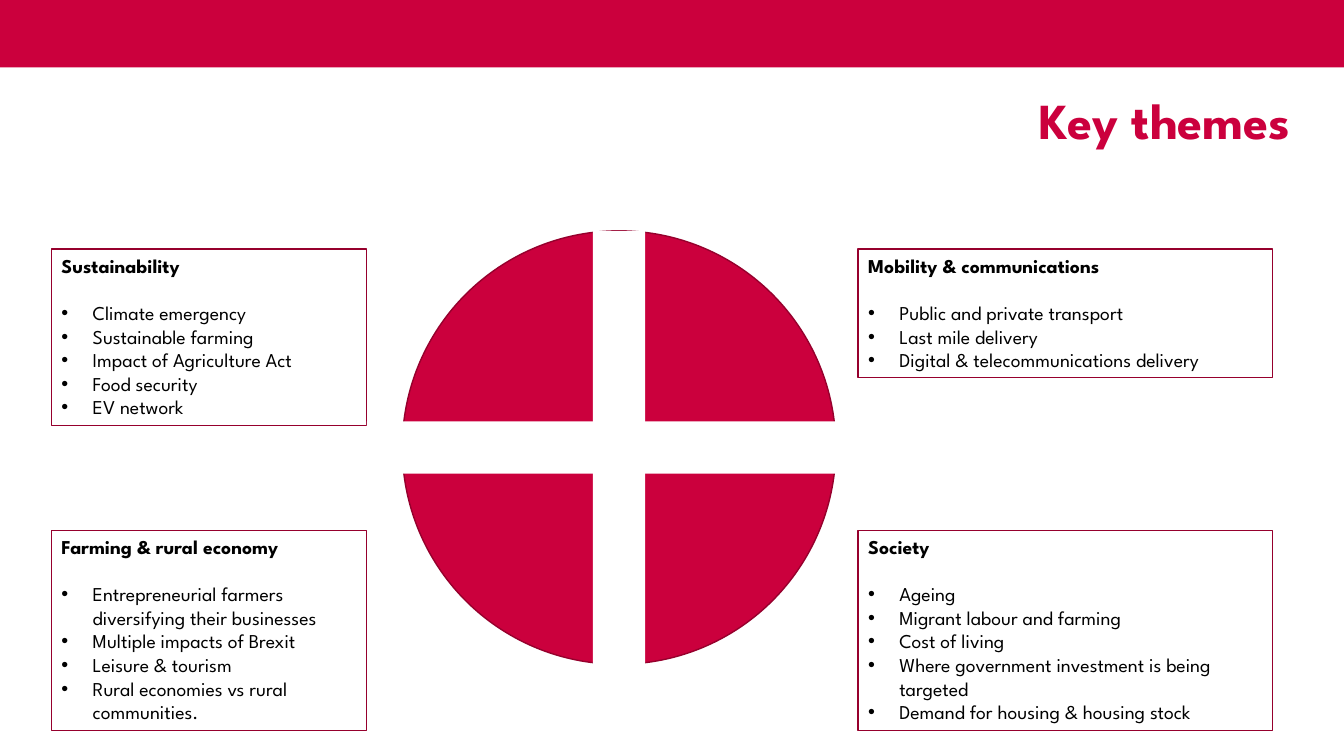
"""Build the Key themes slide: four topic boxes around a divided circle."""
from lxml import etree
from pptx import Presentation
from pptx.dml.color import RGBColor
from pptx.enum import shapes, text
from pptx.oxml.ns import qn
from pptx.util import Inches, Pt

CRIMSON = RGBColor(0xCB, 0x00, 0x3D)
MAROON = RGBColor(0x96, 0x00, 0x2D)
WHITE = RGBColor(0xFF, 0xFF, 0xFF)
BLACK = RGBColor(0x00, 0x00, 0x00)
FONT = "League Spartan"

LEFT, RIGHT = (0.51, 3.13), (8.51, 4.11)
UPPER, LOWER = 2.47, 5.26
CENTRE_X, CENTRE_Y = 6.14, 4.44
DIAMETER, GAP, BAR_LENGTH = 4.3, 0.52, 4.7

THEMES = [
    (LEFT, UPPER, 1.75, "Sustainability",
     ["Climate emergency", "Sustainable farming", "Impact of Agriculture Act",
      "Food security", "EV network"]),
    (RIGHT, UPPER, 1.28, "Mobility & communications",
     ["Public and private transport", "Last mile delivery",
      "Digital & telecommunications delivery"]),
    (LEFT, LOWER, 1.99, "Farming & rural economy",
     ["Entrepreneurial farmers diversifying their businesses",
      "Multiple impacts of Brexit", "Leisure & tourism",
      "Rural economies vs rural communities."]),
    (RIGHT, LOWER, 1.99, "Society",
     ["Ageing", "Migrant labour and farming", "Cost of living",
      "Where government investment is being targeted",
      "Demand for housing & housing stock"]),
]


def place(shape, left, top, width, height):
    """Set a shape's position and size in inches."""
    shape.left, shape.top = Inches(left), Inches(top)
    shape.width, shape.height = Inches(width), Inches(height)


def add_solid(page, kind, left, top, width, height, fill, line=None):
    """Add a filled preset shape, outlined only if a line colour is given."""
    shape = page.shapes.add_shape(
        kind, Inches(left), Inches(top), Inches(width), Inches(height))
    shape.shadow.inherit = False
    shape.fill.solid()
    shape.fill.fore_color.rgb = fill
    if line is None:
        shape.line.fill.background()
    else:
        shape.line.color.rgb = line
        shape.line.width = Pt(1)


def set_bullet(para, mark=None, indent=0.0):
    """Give a paragraph a hanging bullet, or none."""
    props = para._p.get_or_add_pPr()
    props.set("marL", str(Inches(indent)))
    props.set("indent", str(-Inches(indent)))
    if mark is None:
        etree.SubElement(props, qn("a:buNone"))
    else:
        etree.SubElement(props, qn("a:buFont")).set("typeface", "Arial")
        etree.SubElement(props, qn("a:buChar")).set("char", mark)


def write(para, words, size=14, color=BLACK, bold=False,
          align=text.PP_ALIGN.LEFT, spacing=1.0, after=0):
    """Write formatted text into a paragraph."""
    para.alignment = align
    para.line_spacing = spacing
    para.space_before, para.space_after = Pt(0), Pt(after)
    span = para.add_run()
    span.text = words
    span.font.name = FONT
    span.font.size = Pt(size)
    span.font.bold = bold
    span.font.color.rgb = color


def prepare_frame(shape, anchor):
    """Wrap and anchor a shape's text and keep the shape at its set size."""
    frame = shape.text_frame
    frame.word_wrap = True
    frame.auto_size = text.MSO_AUTO_SIZE.NONE
    frame.vertical_anchor = anchor
    return frame


def fill_title(title, words):
    """Place and write the slide title."""
    place(title, 7.47, 0.9, 5.43, 0.65)
    frame = prepare_frame(title, text.MSO_ANCHOR.MIDDLE)
    write(frame.paragraphs[0], words, size=36, color=CRIMSON, bold=True,
          align=text.PP_ALIGN.RIGHT, spacing=0.9)


def fill_theme(box, column, top, height, heading, items):
    """Place an outlined theme box and write its heading and list."""
    left, width = column
    place(box, left, top, width, height)
    box.line.color.rgb = MAROON
    box.line.width = Pt(0.75)
    frame = prepare_frame(box, text.MSO_ANCHOR.TOP)
    set_bullet(frame.paragraphs[0])
    write(frame.paragraphs[0], heading, bold=True, after=16.8)
    for item in items:
        para = frame.add_paragraph()
        set_bullet(para, "•", 0.31)
        write(para, item)


def add_divided_circle(page):
    """Add the circle and the two white bars that cut it into quarters."""
    radius = DIAMETER / 2
    top = CENTRE_Y - radius
    add_solid(page, shapes.MSO_SHAPE.OVAL, CENTRE_X - radius, top,
              DIAMETER, DIAMETER, CRIMSON, MAROON)
    add_solid(page, shapes.MSO_SHAPE.RECTANGLE, CENTRE_X - GAP / 2, top,
              GAP, BAR_LENGTH, WHITE)
    add_solid(page, shapes.MSO_SHAPE.RECTANGLE, 3.64, CENTRE_Y - GAP / 2,
              BAR_LENGTH, GAP, WHITE)


def main():
    """Build and save the deck."""
    deck = Presentation()
    deck.slide_width, deck.slide_height = Inches(13.33), Inches(7.5)
    comparison = deck.slide_layouts.get_by_name("Comparison")
    page = deck.slides.add_slide(comparison)
    add_solid(page, shapes.MSO_SHAPE.RECTANGLE, 0, 0, 13.33, 0.67, CRIMSON)
    fill_title(page.shapes.title, "Key themes")
    add_divided_circle(page)
    boxes = list(page.placeholders)[1:]
    for box, theme in zip(boxes, THEMES):
        fill_theme(box, *theme)
    deck.save("out.pptx")


if __name__ == "__main__":
    main()
